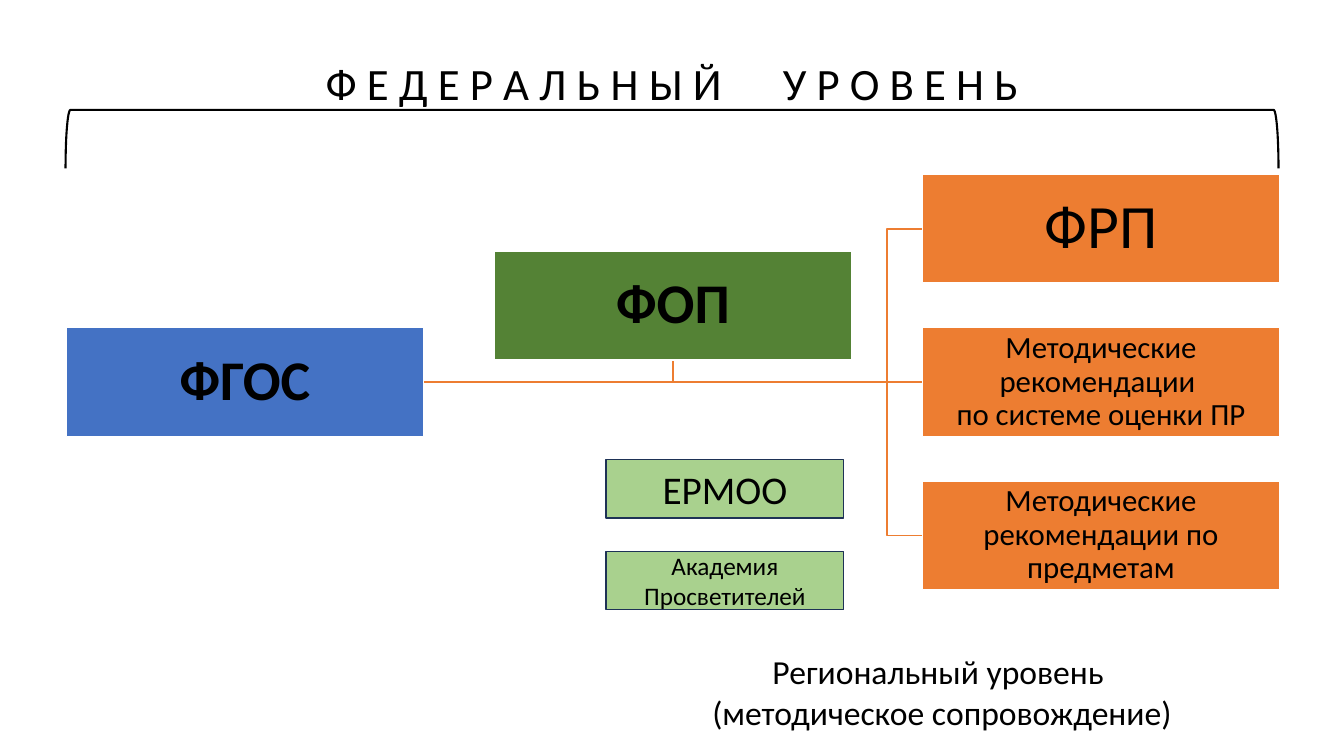
from dataclasses import dataclass

from lxml import etree
from pptx import Presentation
from pptx.dml.color import RGBColor
from pptx.enum.shapes import MSO_CONNECTOR as Connector, MSO_SHAPE as Shape
from pptx.enum.text import MSO_ANCHOR as Anchor, PP_ALIGN as Align
from pptx.oxml.ns import qn
from pptx.util import Inches, Pt


@dataclass(frozen=True)
class Theme:
    font: str = "Calibri"
    ink: str = "000000"
    white: str = "FFFFFF"
    blue: str = "4472C4"
    green: str = "548235"
    orange: str = "ED7D31"
    pale: str = "A9D18E"
    navy: str = "1E3256"
    frp: int = 44
    lead: int = 40
    title: int = 32
    support: int = 28
    caption: int = 24
    body: int = 22
    small: int = 18
    word_gap: int = 36


THEME = Theme()

TITLE = ("Ф Е Д Е Р А Л Ь Н Ы Й", " ", "У Р О В Е Н Ь")
CAPTION = "Региональный уровень \v(методическое сопровождение)"
BOXES = [
    ("ФГОС", 0, 2, THEME.blue, THEME.lead, True),
    ("ФРП", 2, 0, THEME.orange, THEME.frp, False),
    ("Методические рекомендации \vпо системе оценки ПР", 2, 2, THEME.orange, THEME.body, False),
    ("Методические рекомендации по предметам", 2, 4, THEME.orange, THEME.body, False),
    ("ФОП", 1, 1, THEME.green, THEME.lead, True),
]
SUPPORTS = [("ЕРМОО", THEME.support), ("Академия Просветителей", THEME.small)]

WIDTH, HEIGHT = 13.33, 7.5
MARGIN, TOP = 0.66, 1.73
BOX_W, BOX_H = 3.54, 1.08
SPAN = 12.03
COLUMN, ROW = (SPAN - BOX_W) / 2, 0.76
BRACKET_LEFT, BRACKET_TOP, BRACKET_H = 0.65, 1.09, 0.58
SUPPORT_LEFT, SUPPORT_TOP, SUPPORT_STEP = 6.01, 4.56, 0.91

deck = Presentation()
deck.slide_width, deck.slide_height = Inches(WIDTH), Inches(HEIGHT)
page = deck.slides.add_slide(deck.slide_layouts[6])


def color(code):
    return RGBColor.from_string(code)


def column_left(column):
    return MARGIN + column * COLUMN


def row_middle(row):
    return TOP + row * ROW + BOX_H / 2


def outline(shape, code, weight=1):
    shape.line.color.rgb = color(code)
    shape.line.width = Pt(weight)


def style(frame, size, bold=False, spacing=None):
    frame.word_wrap = True
    para = frame.paragraphs[0]
    para.alignment = Align.CENTER
    para.line_spacing = spacing
    para.font.name = THEME.font
    para.font.size = Pt(size)
    para.font.bold = bold
    para.font.color.rgb = color(THEME.ink)


def add_box(text, left, top, width, height, fill, line, size, bold=False, spacing=None):
    box = page.shapes.add_shape(
        Shape.RECTANGLE, Inches(left), Inches(top), Inches(width), Inches(height))
    box.shadow.inherit = False
    box.fill.solid()
    box.fill.fore_color.rgb = color(fill)
    outline(box, line)
    box.text_frame.text = text
    box.text_frame.vertical_anchor = Anchor.MIDDLE
    style(box.text_frame, size, bold, spacing)
    return box


def add_label(left, top, width, height):
    label = page.shapes.add_textbox(Inches(left), Inches(top), Inches(width), Inches(height))
    return label.text_frame


def add_branch(*points):
    corners = [(Inches(x), Inches(y)) for x, y in points]
    builder = page.shapes.build_freeform(*corners[0])
    builder.add_line_segments(corners[1:], close=False)
    branch = builder.convert_to_shape()
    branch.shadow.inherit = False
    branch.fill.background()
    outline(branch, THEME.orange)


def add_branches():
    start, end, trunk = column_left(0) + BOX_W, column_left(2), row_middle(2)
    bend = end - (COLUMN - BOX_W) / 2
    middle = column_left(1) + BOX_W / 2
    add_branch((start, trunk), (middle, trunk), (middle, row_middle(1) + BOX_H / 2))
    for row in (4, 0):
        level = row_middle(row)
        add_branch((start, trunk), (bend, trunk), (bend, level), (end, level))
    line = page.shapes.add_connector(
        Connector.STRAIGHT, Inches(start), Inches(trunk), Inches(end), Inches(trunk))
    outline(line, THEME.orange)
    etree.SubElement(line.element.spPr, qn("a:effectLst"))


def add_heading():
    frame = add_label(BRACKET_LEFT, 0.5, SPAN, 0.64)
    para = frame.paragraphs[0]
    spans = [para.add_run() for _ in TITLE]
    for span, text in zip(spans, TITLE):
        span.text = text
    spans[1]._r.get_or_add_rPr().set("spc", str(THEME.word_gap * 100))
    style(frame, THEME.title)

    bracket = page.shapes.add_shape(
        Shape.LEFT_BRACKET,
        Inches(BRACKET_LEFT + (SPAN - BRACKET_H) / 2),
        Inches(BRACKET_TOP + (BRACKET_H - SPAN) / 2),
        Inches(BRACKET_H), Inches(SPAN))
    bracket.rotation = 90
    bracket.shadow.inherit = False
    bracket.fill.background()
    outline(bracket, THEME.ink, 1.5)


def main():
    add_branches()
    for text, column, row, fill, size, bold in BOXES:
        box = add_box(text, column_left(column), TOP + row * ROW, BOX_W, BOX_H,
                      fill, THEME.white, size, bold, 0.9)
        frame = box.text_frame
        frame.margin_left = frame.margin_right = Inches(0.02)
        frame.margin_top = frame.margin_bottom = Inches(0.02)
    add_heading()
    caption = add_label(SUPPORT_LEFT, 6.41, WIDTH / 2, 0.91)
    caption.text = CAPTION
    style(caption, THEME.caption)
    for index, (text, size) in enumerate(SUPPORTS):
        add_box(text, SUPPORT_LEFT, SUPPORT_TOP + index * SUPPORT_STEP, 2.36, BRACKET_H,
                THEME.pale, THEME.navy, size)
    deck.save("out.pptx")


if __name__ == "__main__":
    main()
